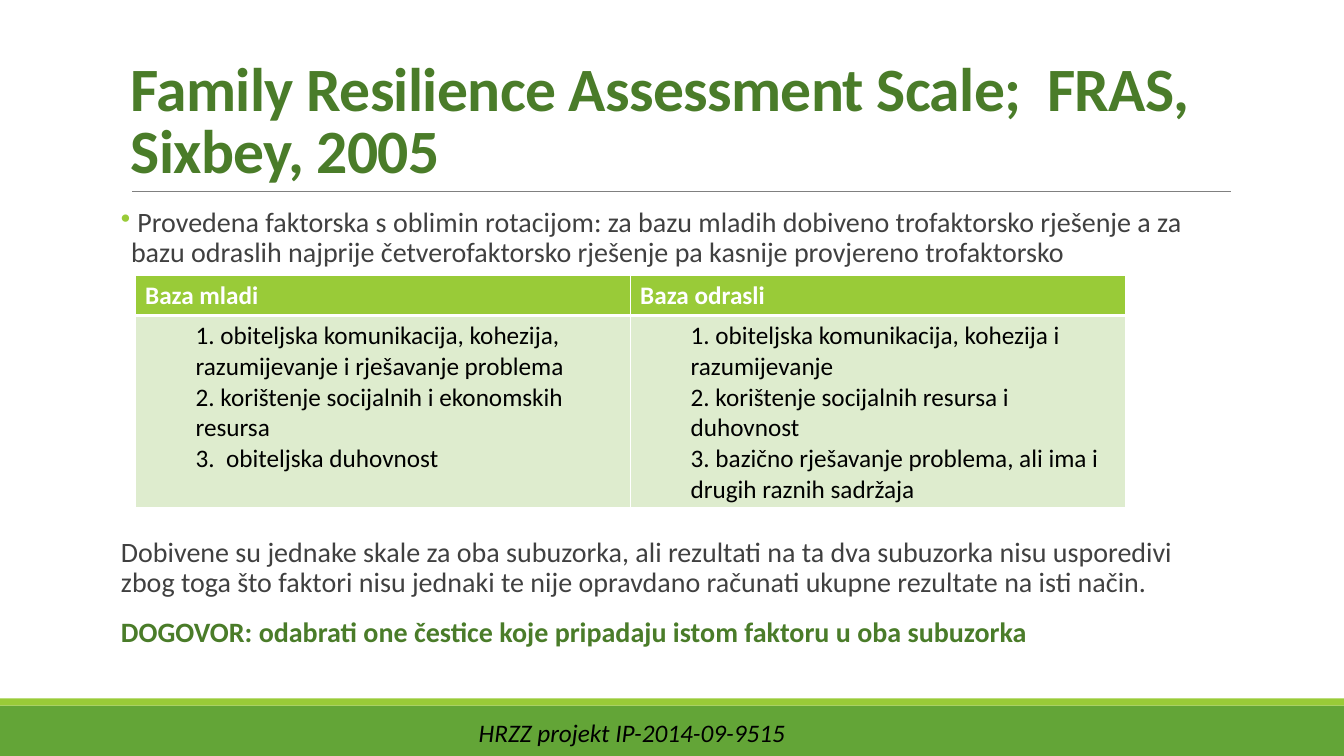
from lxml import etree
from pptx import Presentation
from pptx.dml.color import RGBColor
from pptx.enum import shapes, text
from pptx.oxml.ns import qn
from pptx.util import Inches, Pt

LIME, GREEN, DARK = "99CB38", "63A537", "4A7C29"
GREY, WHITE, BLACK = "404040", "FFFFFF", "000000"


def color(code):
    return RGBColor.from_string(code)


def write(par, words, size=20, ink=GREY, bold=False, italic=False,
          line=None, before=0, after=0, track=None):
    par.line_spacing = line
    par.space_before, par.space_after = Pt(before), Pt(after)
    run = par.add_run()
    run.text = words
    font = run.font
    font.name, font.size = "Calibri", Pt(size)
    font.bold, font.italic = bold, italic
    font.color.rgb = color(ink)
    if track is not None:
        run._r.get_or_add_rPr().set("spc", str(int(track * 100)))


def indent(par, left, first=0):
    props = par._p.get_or_add_pPr()
    props.set("marL", str(Inches(left)))
    props.set("indent", str(Inches(first)))
    return props


def bullet(par, ink):
    props = indent(par, 0.1, -0.1)
    tint = etree.SubElement(props, qn("a:buClr"))
    etree.SubElement(tint, qn("a:srgbClr")).set("val", ink)
    etree.SubElement(props, qn("a:buChar")).set("char", "•")


def frame(slide, x, y, w, h, side=0.1, anchor=text.MSO_ANCHOR.TOP):
    box = slide.shapes.add_textbox(*map(Inches, (x, y, w, h))).text_frame
    box.word_wrap = True
    box.vertical_anchor = anchor
    box.margin_left = box.margin_right = Inches(side)
    return box


def band(slide, x, y, w, h, fill):
    bar = slide.shapes.add_shape(shapes.MSO_SHAPE.RECTANGLE,
                                 *map(Inches, (x, y, w, h)))
    bar.shadow.inherit = False
    bar.fill.solid()
    bar.fill.fore_color.rgb = color(fill)
    bar.line.fill.background()


def footer(slide, x, y, w, h):
    strip = 0.07
    band(slide, x, y + strip, w, h - strip, GREEN)
    band(slide, x, y, w, strip, LIME)
    box = frame(slide, x + 4.65, y + 0.14, 6.67, 0.4)
    write(box.paragraphs[0], "HRZZ projekt IP-2014-09-9515", 18, BLACK,
          italic=True)


def title(slide, x, y, w, h):
    # Rule under the heading
    rule = slide.shapes.add_connector(
        shapes.MSO_CONNECTOR.STRAIGHT, Inches(x + 0.11), Inches(y + h),
        Inches(x + w + 0.01), Inches(y + h))
    rule.line.color.rgb = color("808080")
    rule.line.width = Pt(0.5)
    etree.SubElement(rule._element.spPr, qn("a:effectLst"))
    # Heading
    box = frame(slide, x, y, w, h, anchor=text.MSO_ANCHOR.BOTTOM)
    write(box.paragraphs[0],
          "Family Resilience Assessment Scale;  FRAS, Sixbey, 2005",
          44, DARK, bold=True, line=0.85, track=-0.5)


def body(slide, x, y, w, h):
    box = frame(slide, x, y, w, h, side=0)
    look = dict(line=0.9, after=2)
    intro = box.paragraphs[0]
    write(intro, " Provedena faktorska s oblimin rotacijom: za bazu mladih "
          "dobiveno trofaktorsko rješenje a za bazu odraslih najprije "
          "četverofaktorsko rješenje pa kasnije provjereno trofaktorsko",
          before=12, **look)
    bullet(intro, LIME)
    # Wide gap leaves room for the table
    write(box.add_paragraph(), "Dobivene su jednake skale za oba subuzorka, "
          "ali rezultati na ta dva subuzorka nisu usporedivi zbog toga što "
          "faktori nisu jednaki te nije opravdano računati ukupne rezultate "
          "na isti način.", before=190, **look)
    write(box.add_paragraph(), "DOGOVOR: odabrati one čestice koje pripadaju "
          "istom faktoru u oba subuzorka", ink=DARK, bold=True, before=12,
          **look)


def border(cell, **widths):
    props = cell._tc.get_or_add_tcPr()
    for spot, (side, width) in enumerate(widths.items()):
        edge = etree.Element(qn("a:ln" + side), w=str(Pt(width)))
        fill = etree.SubElement(edge, qn("a:solidFill"))
        etree.SubElement(fill, qn("a:srgbClr")).set("val", WHITE)
        props.insert(spot, edge)


def paint(cell, fill):
    cell.fill.solid()
    cell.fill.fore_color.rgb = color(fill)


def factors(slide, x, y, w, h):
    groups = {
        "Baza mladi": [
            "1. obiteljska komunikacija, kohezija, razumijevanje i "
            "rješavanje problema",
            "2. korištenje socijalnih i ekonomskih resursa",
            "3.  obiteljska duhovnost"],
        "Baza odrasli": [
            "1. obiteljska komunikacija, kohezija i razumijevanje",
            "2. korištenje socijalnih resursa i duhovnost",
            "3. bazično rješavanje problema, ali ima i drugih raznih "
            "sadržaja"],
    }
    grid = slide.shapes.add_table(2, len(groups),
                                  *map(Inches, (x, y, w, h))).table
    grid.rows[0].height = Inches(0.4)
    grid.rows[1].height = Inches(h - 0.4)
    for col, (name, items) in enumerate(groups.items()):
        head, cell = grid.cell(0, col), grid.cell(1, col)
        paint(head, LIME)
        border(head, L=1, R=1, T=1, B=3)
        write(head.text_frame.paragraphs[0], name, 18, WHITE, bold=True)
        paint(cell, "DEECCE")
        border(cell, L=1, R=1, T=3, B=1)
        for row, item in enumerate(items):
            box = cell.text_frame
            par = box.add_paragraph() if row else box.paragraphs[0]
            par.level = 1
            indent(par, 0.5)
            write(par, item, 18, BLACK)


def main():
    deck = Presentation()
    deck.slide_width, deck.slide_height = Inches(13.33), Inches(7.5)
    slide = deck.slides.add_slide(deck.slide_layouts[6])
    footer(slide, 0, 6.93, 13.33, 0.57)
    title(slide, 1.2, 0.31, 11, 1.59)
    body(slide, 1.2, 2.02, 11, 4.8)
    factors(slide, 1.34, 2.73, 9.82, 2.3)
    deck.save("out.pptx")


if __name__ == "__main__":
    main()
